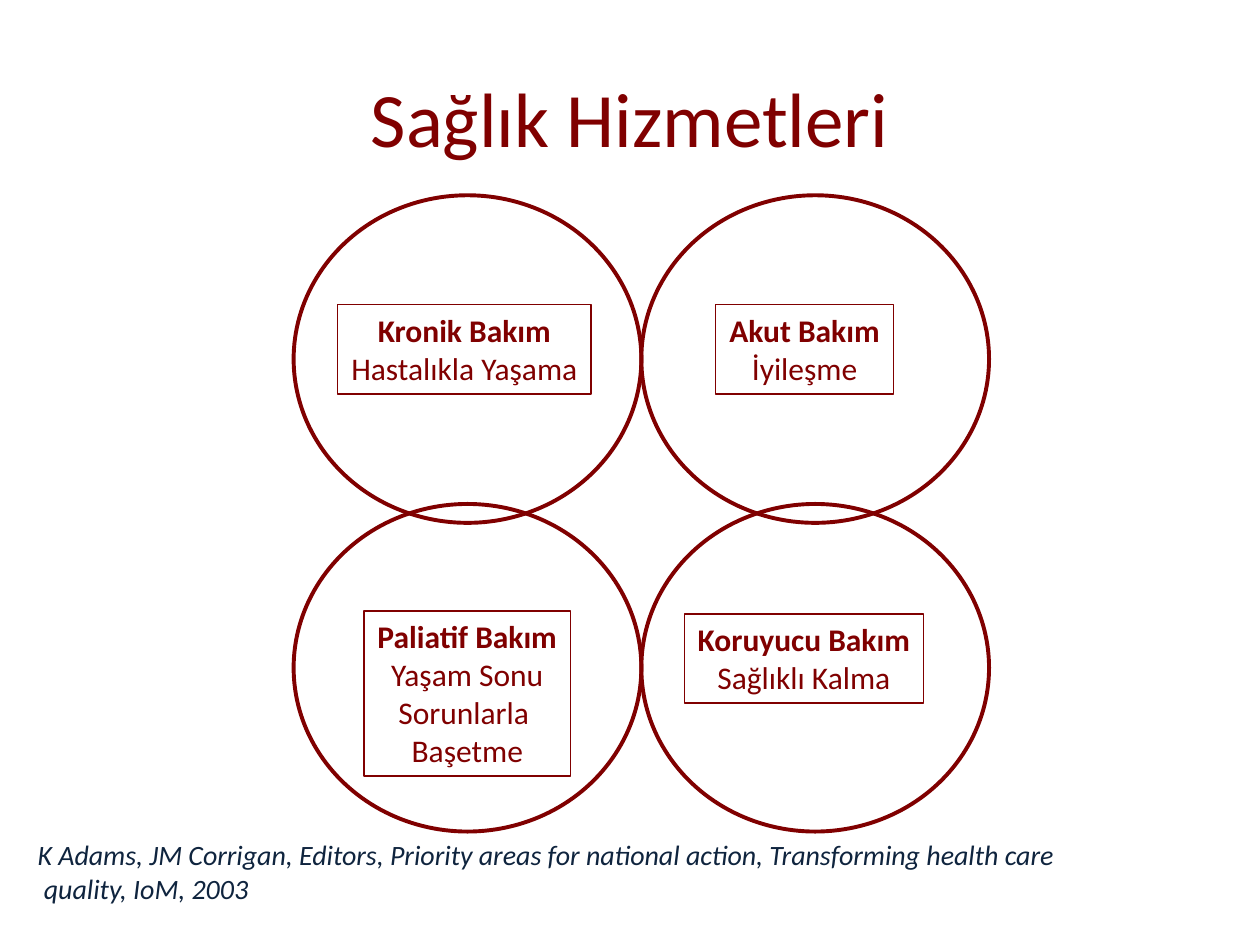
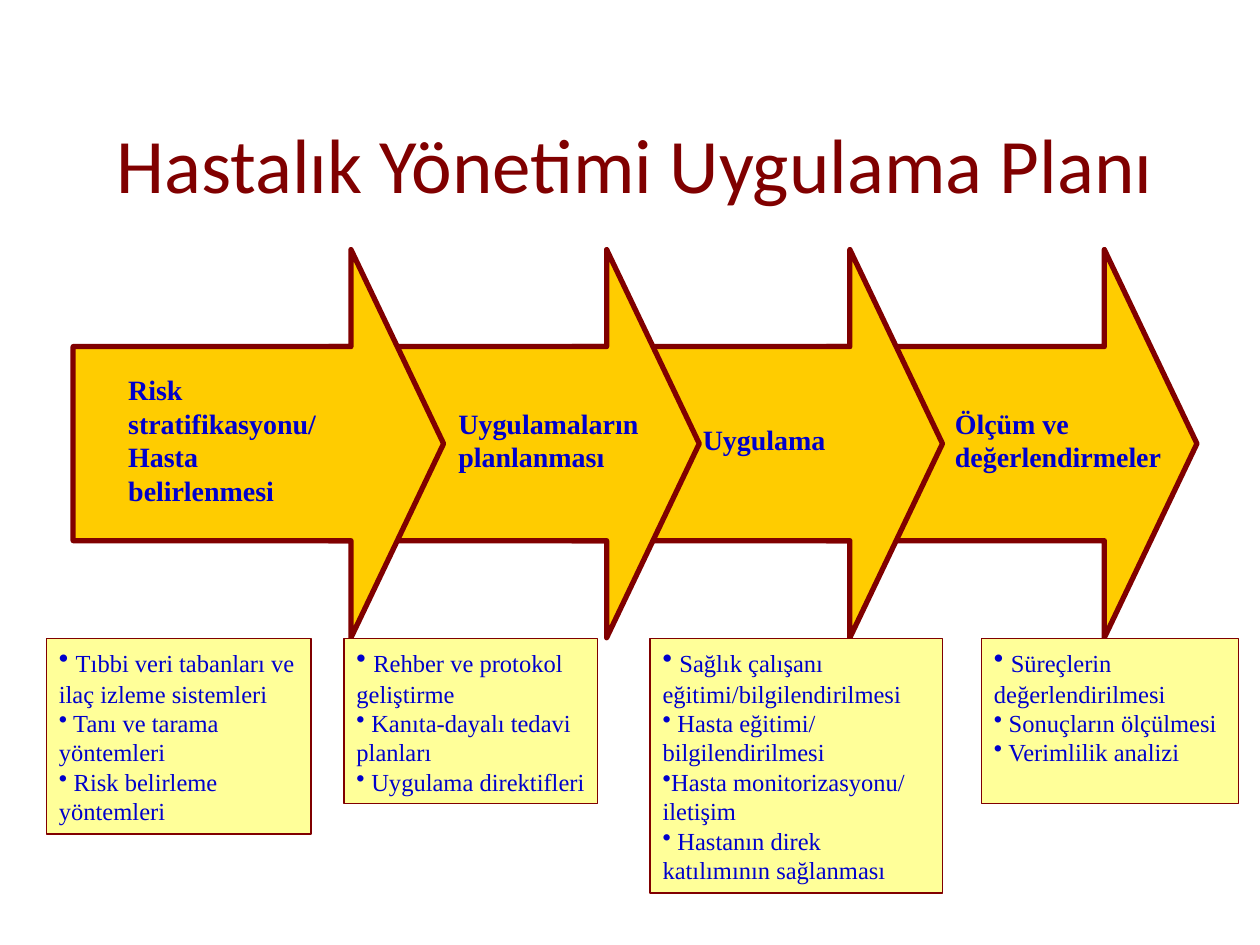
"""Builds two slides on health care services and a disease management plan."""
from lxml import etree
from pptx import Presentation
from pptx.dml.color import RGBColor
from pptx.enum.shapes import MSO_SHAPE
from pptx.enum.text import MSO_ANCHOR, PP_ALIGN
from pptx.oxml.ns import qn
from pptx.util import Pt

OVAL, RECT, ARROW = MSO_SHAPE.OVAL, MSO_SHAPE.RECTANGLE, MSO_SHAPE.RIGHT_ARROW
LEFT, CENTER = PP_ALIGN.LEFT, PP_ALIGN.CENTER
TOP, MIDDLE = MSO_ANCHOR.TOP, MSO_ANCHOR.MIDDLE
MAROON = RGBColor(0x80, 0x00, 0x00)
NAVY = RGBColor(0x0F, 0x24, 0x3E)
BLUE = RGBColor(0x00, 0x00, 0xCC)
GOLD = RGBColor(0xFF, 0xCC, 0x00)
CREAM = RGBColor(0xFF, 0xFF, 0x99)
SANS, SERIF = "Calibri", "Times New Roman"


def write(box, text, size=18, font=SANS, color=MAROON, bold=0, italic=False,
          align=LEFT, anchor=TOP, wrap=False, lead=None):
    """Fill a box line by line; bold counts bold lines, lead sizes the first space."""
    frame = box.text_frame
    frame.word_wrap = wrap
    frame.vertical_anchor = anchor
    for row, line in enumerate(text.split("\n")):
        para = frame.add_paragraph() if row else frame.paragraphs[0]
        para.alignment = align
        if line.startswith("•"):
            mark = etree.SubElement(para._p.get_or_add_pPr(), qn("a:buChar"))
            mark.set("char", "•")
            line = line[1:]
        parts = [(line, size)]
        if lead and row == 0:
            parts = [(line[:1], lead), (line[1:], size)]
        for part, points in parts:
            run = para.add_run()
            run.text = part
            run.font.size = Pt(points)
            run.font.name = font
            run.font.color.rgb = color
            run.font.bold = row < bold
            run.font.italic = italic


def draw(slide, kind, left, top, width, height, weight, fill=None):
    """Add an outlined shape, filled only when a colour is given."""
    shape = slide.shapes.add_shape(kind, Pt(left), Pt(top), Pt(width), Pt(height))
    shape.shadow.inherit = False
    shape.line.color.rgb = MAROON
    shape.line.width = Pt(weight)
    if fill:
        shape.fill.solid()
        shape.fill.fore_color.rgb = fill
    else:
        shape.fill.background()
    return shape


deck = Presentation()
deck.slide_width, deck.slide_height = Pt(720), Pt(540)
slides = []
for text, left, top, width in [
    ("Sağlık Hizmetleri", 36, 21.6, 648),
    ("Hastalık Yönetimi Uygulama Planı", 41.8, 48.2, 642.2),
]:
    slide = deck.slides.add_slide(deck.slide_layouts[5])
    title = slide.shapes.title
    title.left, title.top, title.width, title.height = Pt(left), Pt(top), Pt(width), Pt(90)
    write(title, text, size=44, align=CENTER, anchor=MIDDLE, wrap=True)
    slides.append(slide)
care, plan = slides

for top in (111.6, 288):
    for left in (167.8, 366.5):
        draw(care, OVAL, left, top, 198.7, 187.2, 2.25)

for text, left, top, width, height in [
    ("Akut Bakım\nİyileşme", 409, 174.2, 101.5, 51),
    ("Kronik Bakım\nHastalıkla Yaşama", 193, 174.2, 144.7, 51),
    ("Koruyucu Bakım\nSağlıklı Kalma", 391, 350.8, 136.8, 51),
    ("Paliatif Bakım\nYaşam Sonu\nSorunlarla \nBaşetme", 208, 349.2, 118, 94.3),
]:
    label = draw(care, RECT, left, top, width, height, 0.75)
    write(label, text, bold=1, align=CENTER)

cite = care.shapes.add_textbox(Pt(14.4), Pt(475.2), Pt(606.2), Pt(46))
write(cite, "K Adams, JM Corrigan, Editors, Priority areas for national action, "
      "Transforming health care\n quality, IoM, 2003", size=16, color=NAVY, italic=True)

for left in (472.3, 326.9, 187.9, 41.8):
    arrow = draw(plan, ARROW, left, 142.6, 211.7, 221.8, 3, GOLD)
    arrow.adjustments[0], arrow.adjustments[1] = 0.5, 0.25

for text, left, width, height, align in [
    ("Risk\nstratifikasyonu/\nHasta\nbelirlenmesi", 66.2, 123.1, 85, LEFT),
    ("Uygulamaların\nplanlanması", 254.9, 118.8, 46, LEFT),
    ("Uygulama", 393.8, 85.7, 26.6, CENTER),
    ("Ölçüm ve\ndeğerlendirmeler", 538.6, 133.9, 46, LEFT),
]:
    step = plan.shapes.add_textbox(Pt(left), Pt(251.2 - height / 2), Pt(width), Pt(height))
    write(step, text, size=16, font=SERIF, color=BLUE, bold=4, align=align, anchor=MIDDLE)

for text, left, width, height, wrap in [
    ("• Tıbbi veri tabanları ve\nilaç izleme sistemleri\n• Tanı ve tarama\nyöntemleri\n"
     "• Risk belirleme\nyöntemleri", 26.6, 151.2, 111.6, False),
    ("• Rehber ve protokol\ngeliştirme\n• Kanıta-dayalı tedavi\nplanları\n"
     "• Uygulama direktifleri", 196.6, 144.7, 94.3, False),
    ("• Sağlık çalışanı eğitimi/bilgilendirilmesi\n• Hasta eğitimi/ bilgilendirilmesi\n"
     "•Hasta monitorizasyonu/ iletişim\n• Hastanın direk katılımının sağlanması",
     371.5, 167, 145.4, True),
    ("• Süreçlerin\ndeğerlendirilmesi\n• Sonuçların ölçülmesi\n• Verimlilik analizi",
     560.9, 146.9, 94.3, False),
]:
    panel = draw(plan, RECT, left, 365, width, height, 0.75, CREAM)
    write(panel, text, size=14, font=SERIF, color=BLUE, wrap=wrap, lead=16)

deck.save("out.pptx")
